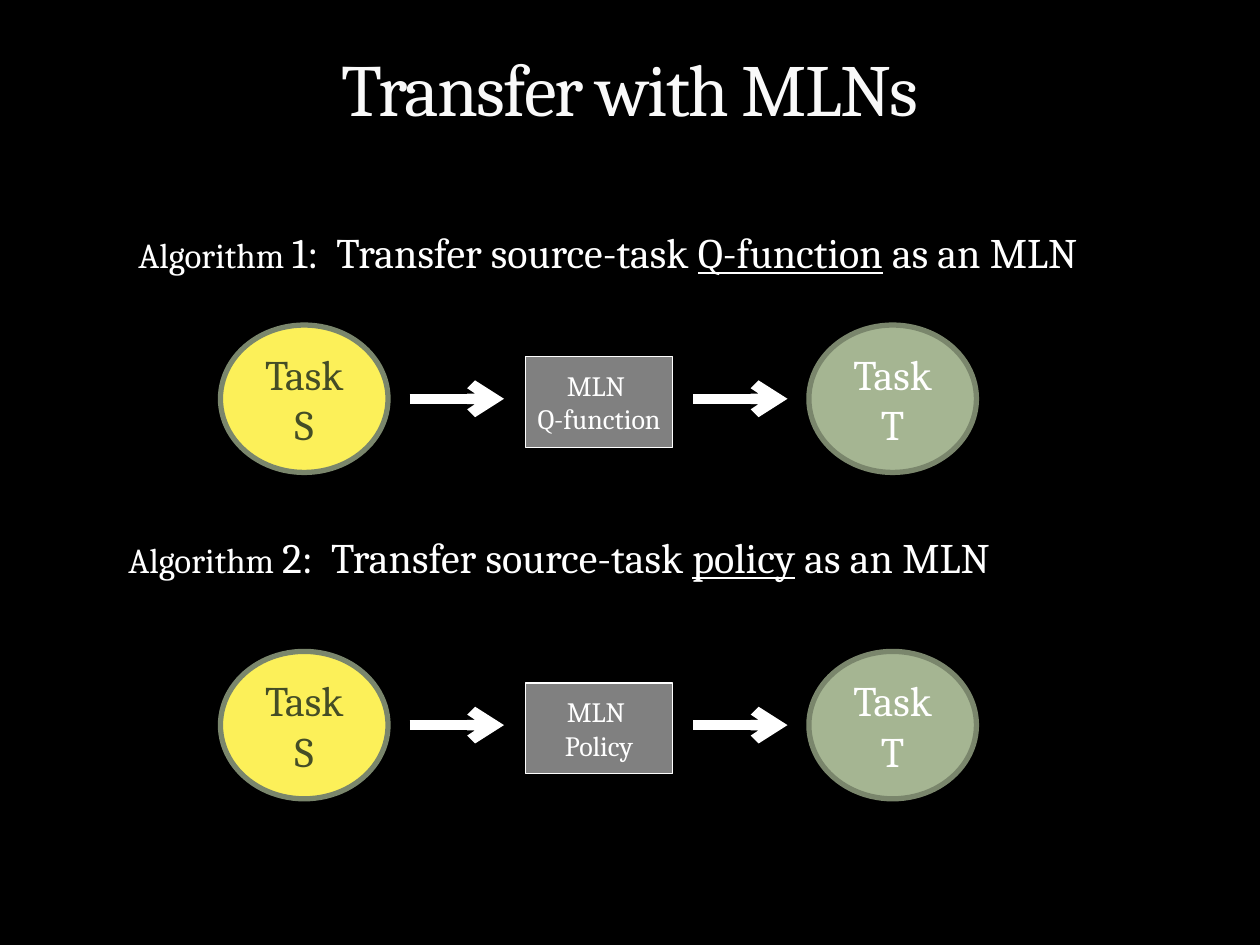
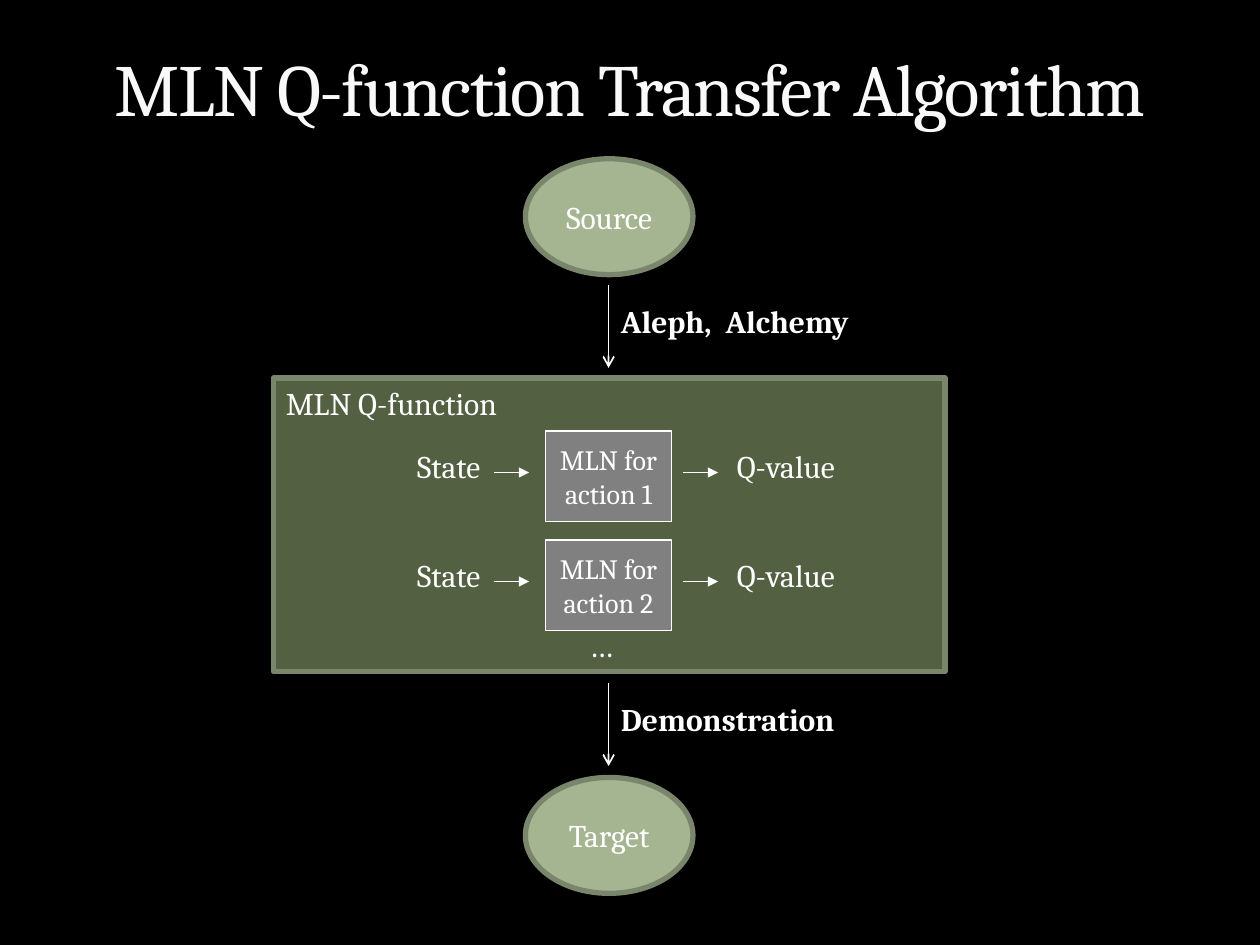
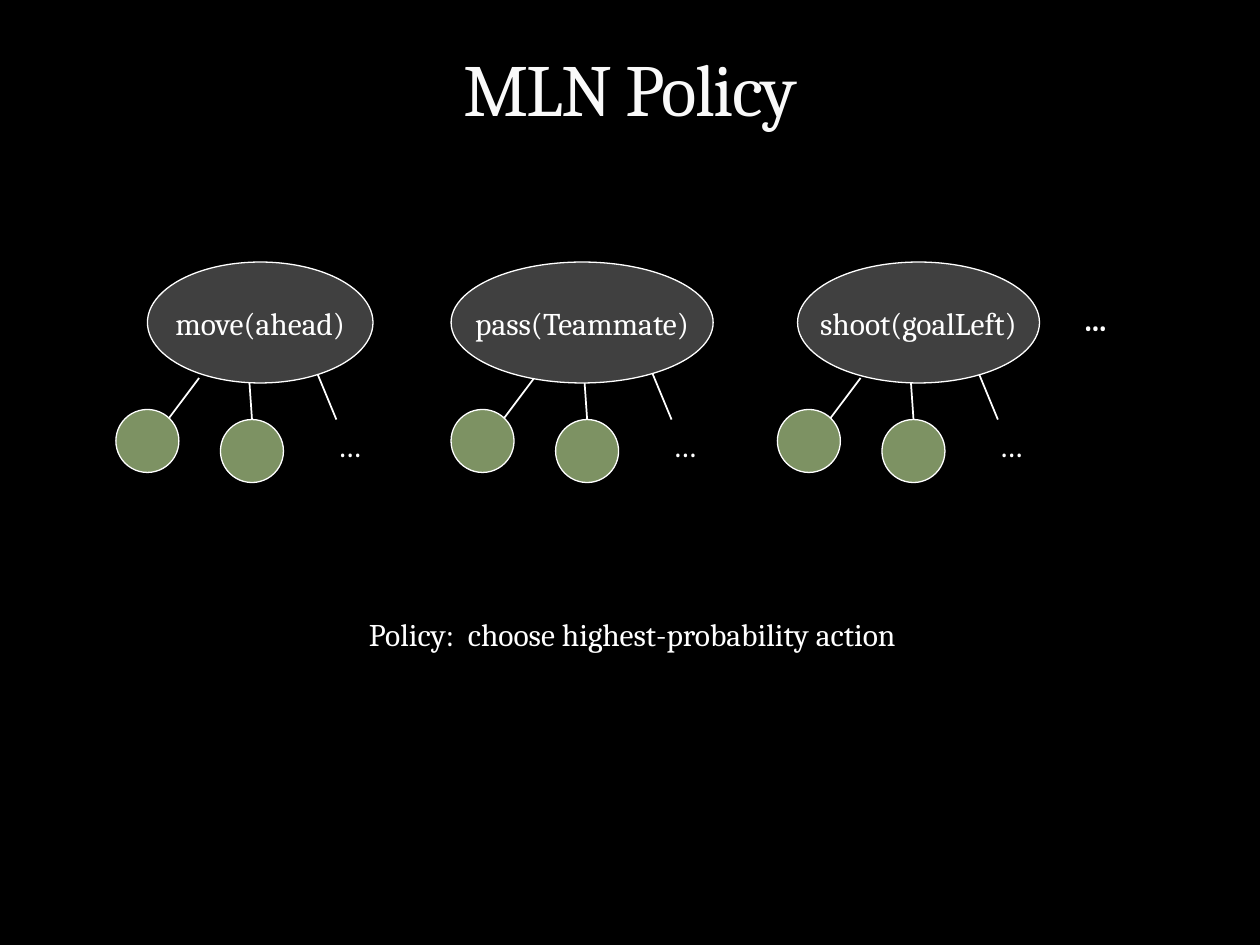
from lxml import etree
from pptx import Presentation
from pptx.dml.color import RGBColor
from pptx.enum.shapes import MSO_CONNECTOR, MSO_SHAPE
from pptx.enum.text import MSO_ANCHOR, MSO_AUTO_SIZE, PP_ALIGN
from pptx.oxml.ns import qn
from pptx.util import Inches, Pt

STRAIGHT = MSO_CONNECTOR.STRAIGHT
OVAL, RECT = MSO_SHAPE.OVAL, MSO_SHAPE.RECTANGLE
LEFT, CENTER, RIGHT = PP_ALIGN.LEFT, PP_ALIGN.CENTER, PP_ALIGN.RIGHT
MIDDLE, BOTTOM = MSO_ANCHOR.MIDDLE, MSO_ANCHOR.BOTTOM
GROW = MSO_AUTO_SIZE.SHAPE_TO_FIT_TEXT

FONT = "Cambria"
BLACK = RGBColor(0x00, 0x00, 0x00)
WHITE = RGBColor(0xFF, 0xFF, 0xFF)
TITLE = RGBColor(0xF9, 0xF9, 0xF9)
SAGE = RGBColor(0xA5, 0xB5, 0x92)
SAGE_EDGE = RGBColor(0x7A, 0x86, 0x6C)
YELLOW = RGBColor(0xFC, 0xF0, 0x59)
OLIVE = RGBColor(0x44, 0x4D, 0x26)
PANEL = RGBColor(0x53, 0x61, 0x42)
LEAF = RGBColor(0x7D, 0x92, 0x63)
GRAY = RGBColor(0x80, 0x80, 0x80)
CHARCOAL = RGBColor(0x40, 0x40, 0x40)


def format_runs(tf, size, color, align, bold=False):
    """Give every run in a text frame the same look."""
    for p in tf.paragraphs:
        p.alignment = align
        for r in p.runs:
            r.font.name, r.font.size, r.font.bold = FONT, Pt(size), bold
            r.font.color.rgb = color


def add_text(slide, box, text, size=18, color=WHITE, align=LEFT, bold=False):
    """Add a wrapping text box and return its text frame."""
    tf = slide.shapes.add_textbox(*map(Inches, box)).text_frame
    tf.word_wrap = True
    tf.auto_size = GROW
    tf.text = text
    format_runs(tf, size, color, align, bold)
    return tf


def add_node(slide, kind, box, fill, edge=WHITE, weight=0.75, text="",
             size=18, color=WHITE, wrap=False):
    """Add a filled, outlined shape with centred text."""
    sp = slide.shapes.add_shape(kind, *map(Inches, box))
    sp.shadow.inherit = False
    sp.fill.solid()
    sp.fill.fore_color.rgb = fill
    sp.line.color.rgb = edge
    sp.line.width = Pt(weight)
    if text:
        tf = sp.text_frame
        tf.word_wrap = wrap
        tf.vertical_anchor = MIDDLE
        tf.text = text
        format_runs(tf, size, color, CENTER)
    return sp


def add_task(slide, box, text, size, fill=SAGE, color=WHITE):
    """Add a task ellipse with its thick edge."""
    add_node(slide, OVAL, box, fill, SAGE_EDGE, 3, text, size, color, True)


def add_line(slide, start, end, weight=1, head=None):
    """Add a white straight line, with an arrowhead if one is named."""
    line = slide.shapes.add_connector(STRAIGHT, *map(Inches, start + end))
    line.line.color.rgb = WHITE
    line.line.width = Pt(weight)
    if head:
        etree.SubElement(line.line._get_or_add_ln(), qn("a:tailEnd"), type=head)
    etree.SubElement(line._element.spPr, qn("a:effectLst"))
    return line


def add_titled_slide(prs, title):
    """Add a blank slide with the shared title style."""
    slide = prs.slides.add_slide(prs.slide_layouts[6])
    tf = add_text(slide, (0.5, 0.17, 9, 0.92), title, 42, TITLE, CENTER)
    tf.auto_size = MSO_AUTO_SIZE.NONE
    tf.vertical_anchor = BOTTOM
    tf.paragraphs[0].runs[0]._r.get_or_add_rPr().set("spc", "-100")
    return slide


def add_heading(slide, box, number, transferred):
    """Add an algorithm heading with the transferred item underlined."""
    tf = add_text(slide, box, "Algorithm ", 20)
    p = tf.paragraphs[0]
    for text in (f"{number}:  Transfer source-task ", transferred, " as an MLN"):
        r = p.add_run()
        r.text = text
    format_runs(tf, 24, WHITE, LEFT)
    p.runs[0].font.size = Pt(20)
    p.runs[2].font.underline = True


def add_transfer_row(slide, left, top, model):
    """Draw source task, model and target task joined by thick arrows."""
    add_task(slide, (left, top, 1.33, 1.17), "Task S", 24, YELLOW, OLIVE)
    add_task(slide, (left + 4.67, top, 1.33, 1.17), "Task T", 24)
    add_node(slide, RECT, (left + 2.42, top + 0.25, 1.17, 0.72), GRAY,
             text=f"MLN \n{model}", size=16)
    y = top + 0.585
    for x in (left + 1.5, left + 3.75):
        add_line(slide, (x, y), (x + 0.75, y), 6, "arrow")


def add_action_row(slide, left, top, number):
    """Draw the path from state through one action's model to its Q-value."""
    add_text(slide, (left, top + 0.08, 1.08, 0.4), "State", align=RIGHT)
    add_node(slide, RECT, (left + 1.5, top, 1, 0.72), GRAY,
             text=f"MLN for\vaction {number}", size=16)
    add_text(slide, (left + 2.92, top + 0.08, 1.08, 0.4), "Q-value")
    y = top + 0.33
    for x in (left + 1.09, left + 2.59):
        add_line(slide, (x, y), (x + 0.28, y), 0.75, "triangle")


def add_q_panel(slide, left, top):
    """Draw the Q-function panel with one row for each action."""
    add_node(slide, RECT, (left, top, 5.33, 2.33), PANEL, SAGE_EDGE, 3)
    add_text(slide, (left, top, 2.17, 0.4), "MLN Q-function")
    for i in range(2):
        add_action_row(slide, left + 0.66, top + 0.42 + 0.865 * i, i + 1)
    add_text(slide, (left + 2.41, top + 1.92, 0.5, 0.4), "…")


def add_step(slide, left, top, label):
    """Draw a downward arrow with a bold label beside it."""
    add_line(slide, (left, top), (left, top + 0.66), 1, "arrow")
    add_text(slide, (left, top + 0.085, 2.25, 0.4), label, bold=True)


def add_action_tree(slide, left, top, action, offset, width):
    """Draw an action ellipse above its leaves."""
    leaves = [add_node(slide, OVAL, (left + x, top + y, 0.5, 0.5), LEAF)
              for x, y in ((0, 1.17), (0.83, 1.25))]
    add_line(slide, (left + 0.66, top + 0.92), (left + 0.42, top + 1.24))
    stem = add_line(slide, (left + 1.06, top + 0.96), (left + 1.08, top + 1.25))
    stem.end_connect(leaves[1], 0)
    add_line(slide, (left + 1.58, top + 0.84), (left + 1.75, top + 1.25))
    add_node(slide, OVAL, (left + offset, top, width, 0.96), CHARCOAL, text=action)
    add_text(slide, (left + 1.66, top + 1.25, 0.67, 0.4), "…")


def build_transfer(prs):
    """Build the overview of the two algorithms."""
    slide = add_titled_slide(prs, "Transfer with MLNs")
    add_heading(slide, (1, 1.75, 8.08, 0.5), 1, "Q-function")
    add_heading(slide, (0.92, 4.17, 8.25, 0.5), 2, "policy")
    for top, model in ((2.58, "Q-function"), (5.17, "Policy")):
        add_transfer_row(slide, 1.75, top, model)


def build_q_function(prs):
    """Build the steps of the Q-function algorithm."""
    slide = add_titled_slide(prs, "MLN Q-function Transfer Algorithm")
    for top, text in ((1.26, "Source"), (6.17, "Target")):
        add_task(slide, (4.17, top, 1.33, 0.92), text, 18)
    for top, label in ((2.26, "Aleph,  Alchemy"), (5.42, "Demonstration")):
        add_step(slide, 4.83, top, label)
    add_q_panel(slide, 2.17, 3)


def build_policy(prs):
    """Build the policy slide with one tree for each action."""
    slide = add_titled_slide(prs, "MLN Policy")
    trees = ((0.92, "move(ahead)", 0.25, 1.79),
             (3.58, "pass(Teammate)", 0, 2.08),
             (6.17, "shoot(goalLeft)", 0.16, 1.92))
    for left, action, offset, width in trees:
        add_action_tree(slide, left, 2.08, action, offset, width)
    add_text(slide, (8.5, 2.33, 0.67, 0.4), "…", bold=True)
    add_text(slide, (2.83, 4.83, 4.75, 0.4),
             "Policy:  choose highest-probability action")


def main():
    """Build and save the presentation."""
    prs = Presentation()
    prs.slide_width, prs.slide_height = Inches(10), Inches(7.5)
    background = prs.slide_master.background.fill
    background.solid()
    background.fore_color.rgb = BLACK
    for build in (build_transfer, build_q_function, build_policy):
        build(prs)
    prs.save("out.pptx")


if __name__ == "__main__":
    main()
